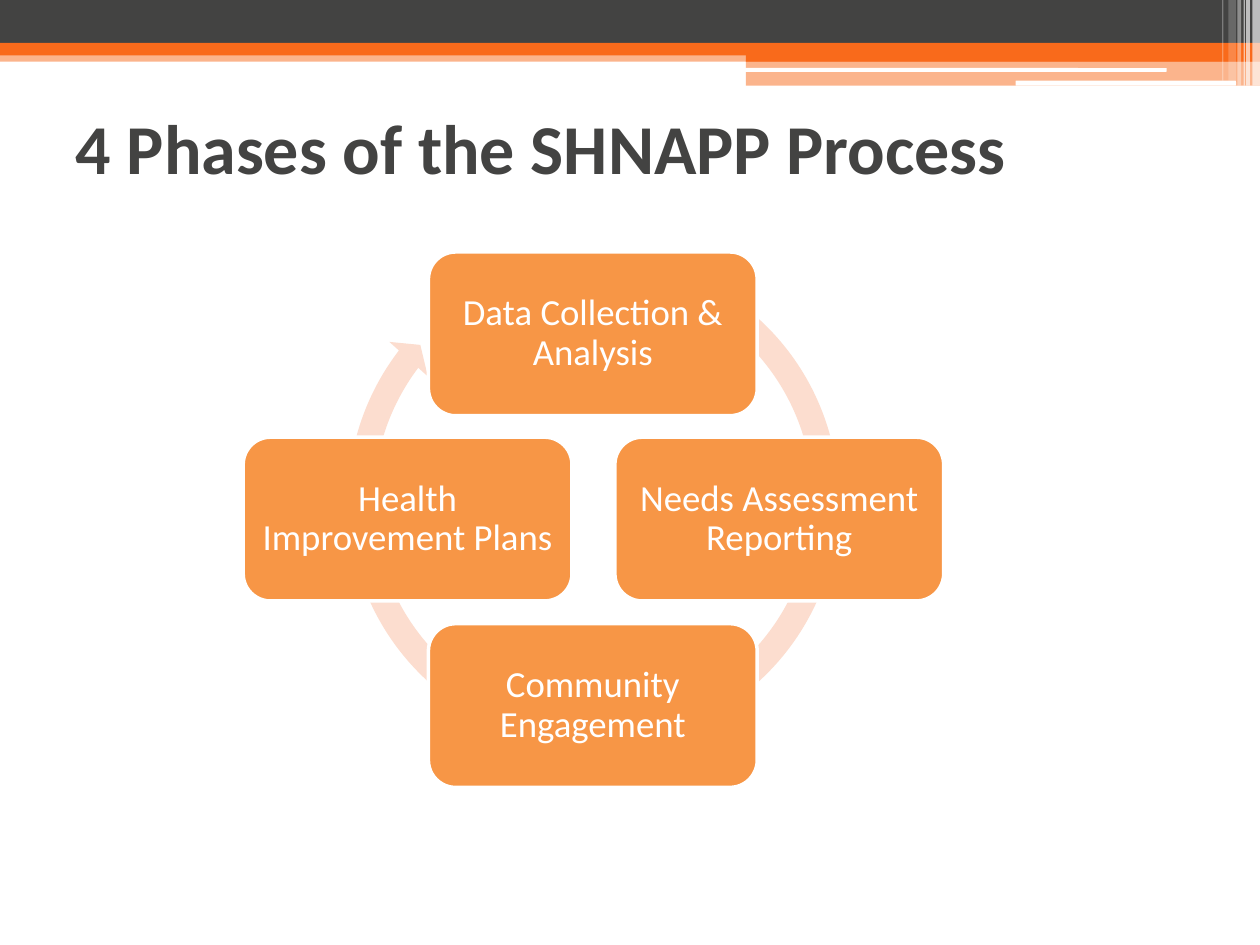
"""Build the slide on the four phases of the SHNAPP process."""
from pptx import Presentation
from pptx.dml.color import RGBColor
from pptx.enum.shapes import MSO_SHAPE
from pptx.enum.text import MSO_ANCHOR, MSO_AUTO_SIZE, PP_ALIGN
from pptx.oxml.xmlchemy import OxmlElement
from pptx.util import Inches, Pt

DARK, ORANGE, WHITE = "434342", "F96A1B", "FFFFFF"
BOX, RING = "F79646", "FCDDCF"

prs = Presentation()
prs.slide_width, prs.slide_height = Inches(10), Inches(7.5)
COL, ROW = prs.slide_width // 1000, prs.slide_height // 750
slide = prs.slides.add_slide(prs.slide_layouts[5])


def color(fmt, value):
    """Give a fill or a font color the hex value."""
    fmt.rgb = RGBColor.from_string(value)


def add(kind, x, y, w, h, fill, alpha=100):
    """Add a filled shape placed in grid columns and rows."""
    s = slide.shapes.add_shape(kind, x * COL, y * ROW, w * COL, h * ROW)
    s.shadow.inherit = False
    s.line.fill.background()
    s.fill.solid()
    color(s.fill.fore_color, fill)
    if alpha < 100:
        a = OxmlElement("a:alpha")
        a.set("val", str(alpha * 1000))
        s.fill._xPr.find(".//{*}srgbClr").append(a)
    return s


for x, y, w, h, fill, alpha in [
    (0, 40, 1000, 9, ORANGE, 50),
    (0, 0, 1000, 34, DARK, 100),
    (0, 34, 1000, 10, ORANGE, 100),
    (592, 39, 408, 10, ORANGE, 100),
    (592, 48, 408, 20, ORANGE, 50),
]:
    add(MSO_SHAPE.RECTANGLE, x, y, w, h, fill, alpha)

for x, y, w, h in [(591, 54, 335, 3), (806, 64, 175, 4)]:
    add(MSO_SHAPE.ROUNDED_RECTANGLE, x, y, w, h, WHITE)

for x, w, h, alpha in [
    (994, 6, 68, 65),
    (989, 3, 68, 65),
    (987, 1, 68, 60),
    (982, 3, 68, 40),
    (975, 6, 64, 20),
    (970, 1, 64, 30),
]:
    add(MSO_SHAPE.RECTANGLE, x, 0, w, h, WHITE, alpha)

title = slide.shapes.title
title.left, title.top, title.width, title.height = 50 * COL, 58 * ROW, 900 * COL, 117 * ROW
tf = title.text_frame
tf.text = "4 Phases of the SHNAPP Process"
tf.auto_size = MSO_AUTO_SIZE.NONE
tf.vertical_anchor = MSO_ANCHOR.MIDDLE
p = tf.paragraphs[0]
p.alignment = PP_ALIGN.LEFT
r = p.runs[0]
r.font.name, r.font.size, r.font.bold = "Calibri", Pt(40), True
color(r.font.color, DARK)

ring = add(MSO_SHAPE.CIRCULAR_ARROW, 266, 192, 410, 410, RING)
for i, value in enumerate([0.05, 2.73, 130.41, 178.9, 0.05]):
    ring.adjustments[i] = value

STEP, LEFT, TOP = 147.5, 340.5, 347.5
for text, dx, dy in [
    ("Data Collection & Analysis", 0, -1),
    ("Needs Assessment Reporting", 1, 0),
    ("Community Engagement", 0, 1),
    ("Health Improvement Plans", -1, 0),
]:
    s = add(MSO_SHAPE.ROUNDED_RECTANGLE, int(LEFT + dx * STEP), int(TOP + dy * STEP), 261, 130, BOX)
    s.line.width = Pt(2)
    color(s.line.color, WHITE)
    tf = s.text_frame
    tf.word_wrap = True
    tf.vertical_anchor = MSO_ANCHOR.MIDDLE
    tf.margin_left = tf.margin_right = 9 * COL
    tf.margin_top = tf.margin_bottom = 9 * ROW
    tf.text = text
    p = tf.paragraphs[0]
    p.alignment, p.line_spacing = PP_ALIGN.CENTER, 0.9
    r = p.runs[0]
    r.font.name, r.font.size = "Calibri", Pt(21)
    color(r.font.color, WHITE)

prs.save("out.pptx")
